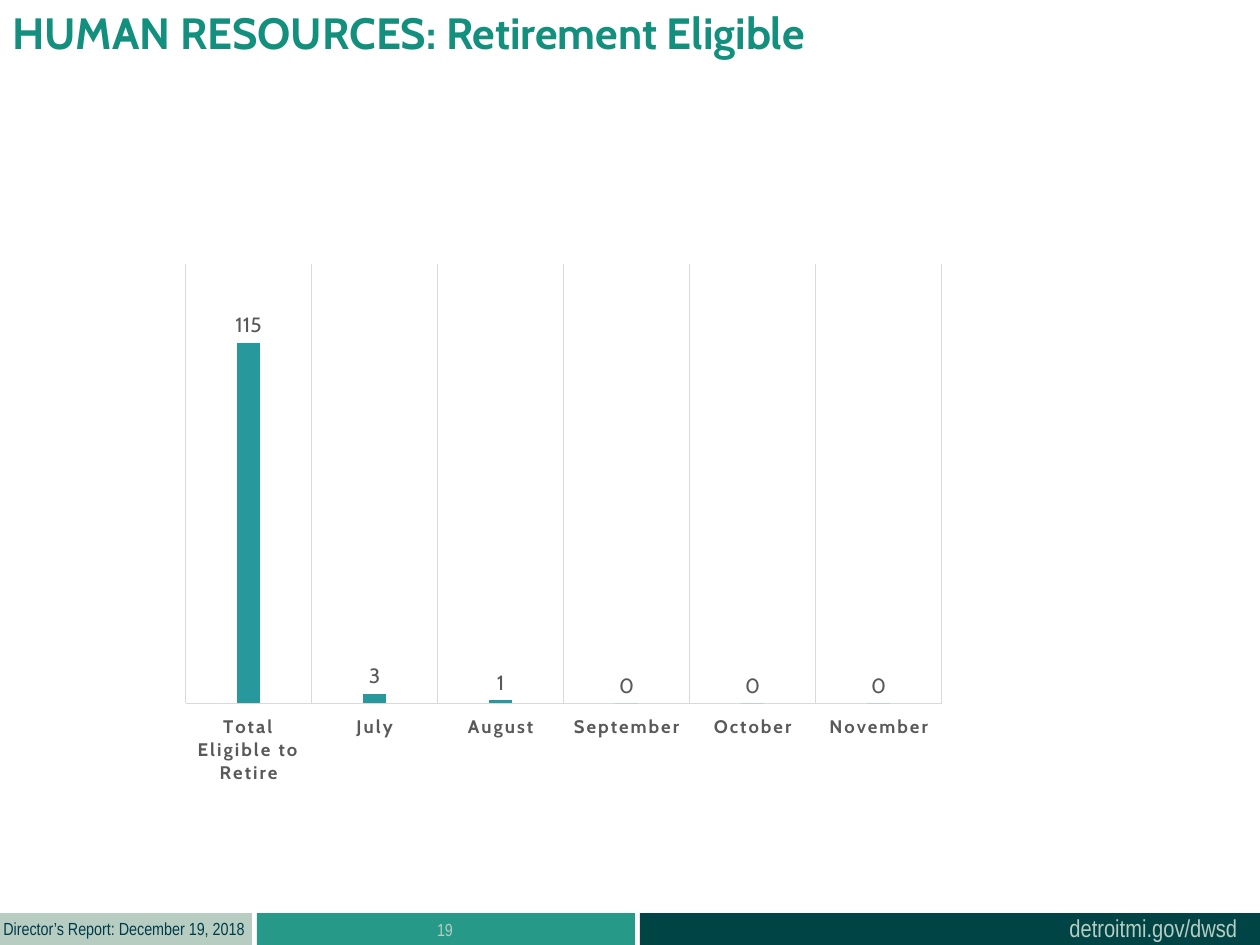
"""Build the retirement eligibility slide with a column chart and a footer band."""
from lxml import etree
from pptx import Presentation
from pptx.chart.data import CategoryChartData
from pptx.dml.color import RGBColor as RGB
from pptx.enum.chart import XL_CHART_TYPE as CT, XL_LABEL_POSITION as LP, XL_TICK_LABEL_POSITION as TLP, XL_TICK_MARK as TM
from pptx.enum.shapes import MSO_SHAPE as SHAPE
from pptx.enum.text import MSO_ANCHOR as ANCHOR, PP_ALIGN as AL
from pptx.oxml import parse_xml
from pptx.oxml.ns import nsdecls, qn
from pptx.util import Pt

PX = 914400 / 126
THEME = {
    "teal": "279989", "dark": "004445", "sage": "B7CDC2", "navy": "003B49",
    "title": "138F7E", "bar": "27999D", "gray": "595959", "grid": "D9D9D9",
    "head": "Cabin", "foot": "Arial Narrow",
    "title_pt": 25, "link_pt": 14, "foot_pt": 10, "label_pt": 12, "axis_pt": 10.6,
}


def px(*values):
    return [round(v * PX) for v in values]


def style(font, face, size, color, bold=False):
    values = {"name": THEME[face], "size": Pt(THEME[size]), "bold": bold}
    for name, value in values.items():
        setattr(font, name, value)
    font.color.rgb = RGB.from_string(THEME[color])


prs = Presentation()
prs.slide_width, prs.slide_height = px(1260, 945)
s = prs.slides.add_slide(prs.slide_layouts[6])

for left, width, color in [(257, 378, "teal"), (640, 630, "dark"), (0, 252, "sage")]:
    sp = s.shapes.add_shape(SHAPE.RECTANGLE, *px(left, 913, width, 32))
    sp.shadow.inherit = False
    sp.fill.solid()
    sp.fill.fore_color.rgb = RGB.from_string(THEME[color])
    sp.line.fill.background()

texts = [
    ("detroitmi.gov/dwsd", (1057, 907, 195, 43), "foot", "link_pt", "sage", False, AL.LEFT, False),
    ("Director’s Report: December 19, 2018", (-9, 912, 276, 34), "foot", "foot_pt", "navy", False, AL.LEFT, True),
    ("19", (256, 913, 378, 50), "foot", "foot_pt", "sage", False, AL.CENTER, True),
    ("HUMAN RESOURCES: Retirement Eligible", (0, 0, 956, 97), "head", "title_pt", "title", True, AL.LEFT, True),
]
for text, box, face, size, color, bold, align, wrap in texts:
    tf = s.shapes.add_textbox(*px(*box)).text_frame
    for name, value in {"word_wrap": wrap, "vertical_anchor": ANCHOR.TOP}.items():
        setattr(tf, name, value)
    p = tf.paragraphs[0]
    p.alignment = align
    r = p.add_run()
    r.text = text
    style(r.font, face, size, color, bold)

data = CategoryChartData(number_format="#,##0")
data.categories = ["Total Eligible to Retire", "July", "August", "September", "October", "November"]
data.add_series("Series 1", [115, 3, 1, 0, 0, 0])
chart = s.shapes.add_chart(CT.COLUMN_CLUSTERED, *px(179, 226, 840, 559), data).chart
chart.has_legend = chart.has_title = False
style(chart.font, "head", "axis_pt", "gray")

plot = chart.plots[0]
for name, value in {"gap_width": 444, "overlap": -90, "vary_by_categories": False, "has_data_labels": True}.items():
    setattr(plot, name, value)
labels = plot.data_labels
for name, value in {"show_value": True, "position": LP.OUTSIDE_END,
                    "number_format": "#,##0", "number_format_is_linked": False}.items():
    setattr(labels, name, value)
style(labels.font, "head", "label_pt", "gray")
fill = plot.series[0].format.fill
fill.solid()
fill.fore_color.rgb = RGB.from_string(THEME["bar"])

cat, val = chart.category_axis, chart.value_axis
for name, value in {"major_tick_mark": TM.NONE, "minor_tick_mark": TM.NONE,
                    "has_major_gridlines": True, "tick_label_position": TLP.LOW}.items():
    setattr(cat, name, value)
for line in (cat.format.line, cat.major_gridlines.format.line):
    line.color.rgb = RGB.from_string(THEME["grid"])
    line.width = Pt(0.75)
style(cat.tick_labels.font, "head", "axis_pt", "gray", True)
cat._element.find(".//" + qn("a:defRPr")).set("spc", "120")
for name, value in {"visible": False, "has_major_gridlines": False,
                    "minimum_scale": 0, "maximum_scale": 140}.items():
    setattr(val, name, value)

area = chart._chartSpace.chart.plotArea
for old in area.findall(qn("c:layout")):
    area.remove(old)
layout = parse_xml(f"<c:layout {nsdecls('c')}><c:manualLayout/></c:layout>")
for tag, value in [("layoutTarget", "inner"), ("xMode", "edge"), ("yMode", "edge"),
                   ("x", 0.008), ("y", 0.07), ("w", 0.9), ("h", 0.8)]:
    etree.SubElement(layout[0], qn("c:" + tag)).set("val", str(value))
area.insert(0, layout)

prs.save("out.pptx")
